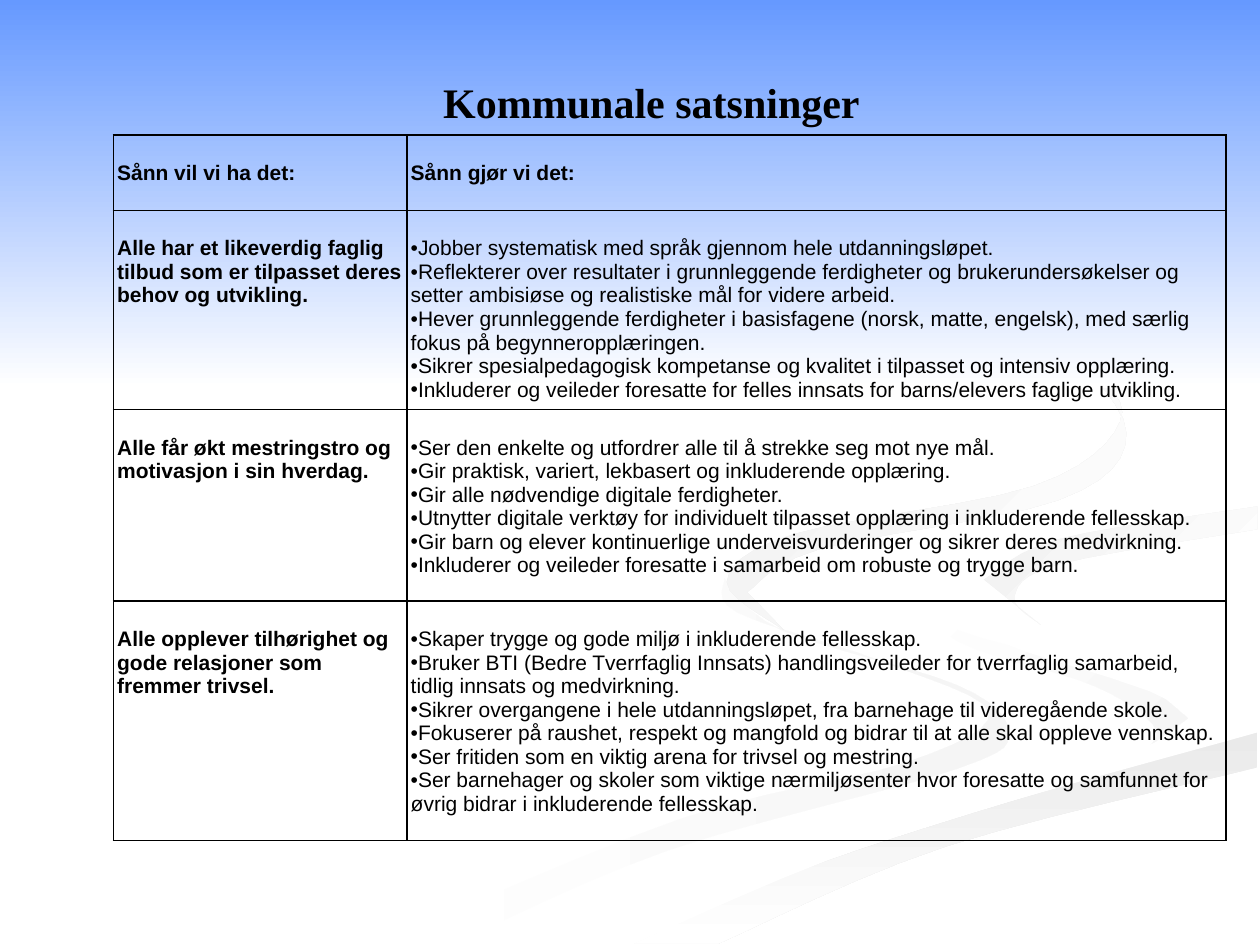
from lxml.etree import SubElement
from pptx import Presentation
from pptx.dml.color import RGBColor
from pptx.enum.shapes import MSO_SHAPE
from pptx.enum.text import MSO_ANCHOR, PP_ALIGN
from pptx.oxml.ns import qn
from pptx.util import Inches, Pt

BLACK = RGBColor(0x00, 0x00, 0x00)
WHITE = RGBColor(0xFF, 0xFF, 0xFF)
BLUE = RGBColor(0x66, 0x99, 0xFF)
PALE = RGBColor(0xF5, 0xF5, 0xF5)
GREY = RGBColor(0xEA, 0xEA, 0xEA)
MIST = RGBColor(0xF1, 0xF1, 0xF1)
SILVER = RGBColor(0xED, 0xED, 0xED)

# Content
TITLE = "Kommunale satsninger"
HEADERS = ["Sånn vil vi ha det:", "Sånn gjør vi det:"]
GOALS = [
    ("Alle har et likeverdig faglig tilbud som er tilpasset deres behov og utvikling.", [
        "Jobber systematisk med språk gjennom hele utdanningsløpet.",
        "Reflekterer over resultater i grunnleggende ferdigheter og brukerundersøkelser og "
        "setter ambisiøse og realistiske mål for videre arbeid.",
        "Hever grunnleggende ferdigheter i basisfagene (norsk, matte, engelsk), med særlig "
        "fokus på begynneropplæringen.",
        "Sikrer spesialpedagogisk kompetanse og kvalitet i tilpasset og intensiv opplæring.",
        "Inkluderer og veileder foresatte for felles innsats for barns/elevers faglige utvikling.",
    ]),
    ("Alle får økt mestringstro og motivasjon i sin hverdag.", [
        "Ser den enkelte og utfordrer alle til å strekke seg mot nye mål.",
        "Gir praktisk, variert, lekbasert og inkluderende opplæring.",
        "Gir alle nødvendige digitale ferdigheter.",
        "Utnytter digitale verktøy for individuelt tilpasset opplæring i inkluderende fellesskap.",
        "Gir barn og elever kontinuerlige underveisvurderinger og sikrer deres medvirkning.",
        "Inkluderer og veileder foresatte i samarbeid om robuste og trygge barn.",
    ]),
    ("Alle opplever tilhørighet og gode relasjoner som fremmer trivsel.", [
        "Skaper trygge og gode miljø i inkluderende fellesskap.",
        "Bruker BTI (Bedre Tverrfaglig Innsats) handlingsveileder for tverrfaglig samarbeid, "
        "tidlig innsats og medvirkning.",
        "Sikrer overgangene i hele utdanningsløpet, fra barnehage til videregående skole.",
        "Fokuserer på raushet, respekt og mangfold og bidrar til at alle skal oppleve vennskap.",
        "Ser fritiden som en viktig arena for trivsel og mestring.",
        "Ser barnehager og skoler som viktige nærmiljøsenter hvor foresatte og samfunnet for "
        "øvrig bidrar i inkluderende fellesskap.",
    ]),
]
COLS = [2.33, 6.5]
ROWS = [0.6, 1.58, 1.52, 1.9]

# Background ribbons: first colour, last colour, clockwise angle, smooth edges
RIBBONS = [
    (WHITE, PALE, 0, [
        [(5.75, 4.59), (5.85, 4.86), (7, 5.25), (7.85, 5.65), (7.2, 6.05), (5.4, 6.5), (3, 7.49)],
        [(3.6, 7.49), (5.3, 6.75), (7.6, 6.1), (8, 5.8), (7.6, 5.44), (6.2, 5), (5.75, 4.59)]]),
    (WHITE, PALE, 45, [
        [(7.24, 4.64), (7.6, 5.09), (8.7, 5.45), (9.18, 5.8), (8.94, 6.05)],
        [(9.43, 5.7), (8.9, 5.35), (7.6, 5), (7.24, 4.64)]]),
    (GREY, WHITE, 90, [
        [(5.03, 7.49), (6.3, 6.93), (8, 6.37), (9.98, 5.81)],
        [(9.98, 6.09), (7.5, 6.72), (5.7, 7.49)]]),
    (WHITE, WHITE, 0, [
        [(7.25, 4.64), (7.9, 5.08), (9.43, 5.7), (7.8, 6.34), (4.77, 7.49)],
        [(5.03, 7.49), (7, 6.67), (9.99, 5.81)],
        [(9.99, 5.38), (8.3, 4.98), (7.82, 4.6), (8.5, 4.27), (9.99, 4.02)],
        [(9.99, 3.87), (8.1, 4.17), (7.25, 4.64)]]),
    (MIST, WHITE, 45, [
        [(9.98, 4.2), (8.4, 4.48), (8.05, 4.74), (8.26, 4.96)],
        [(7.81, 4.6), (8.4, 4.28), (9.98, 4.02)]]),
    (SILVER, WHITE, 45, [
        [(7.62, 2.33), (8.6, 2.9), (8.89, 3.35), (8.2, 3.86), (6.3, 4.24), (5.77, 4.62), (6.22, 5)],
        [(5.93, 4.7), (6.5, 4.36), (8.4, 3.97), (8.94, 3.44), (8.4, 2.73), (7.62, 2.33)]]),
]


def smooth_edge(knots, steps=6):
    """Catmull-Rom curve through the knots."""
    padded = [knots[0], *knots, knots[-1]]
    points = []
    for quad in zip(padded, padded[1:], padded[2:], padded[3:]):
        for k in range(steps):
            t = k / steps
            points.append(tuple(
                b + t * (c - a) / 2 + t**2 * (2*a - 5*b + 4*c - d) / 2
                + t**3 * (3*b - a - 3*c + d) / 2
                for a, b, c, d in zip(*quad)))
    return points + [knots[-1]]


def paint(sp, first, last, angle):
    sp.shadow.inherit = False
    sp.line.fill.background()
    if first == last:
        sp.fill.solid()
        sp.fill.fore_color.rgb = first
        return
    sp.fill.gradient()
    sp.fill.gradient_angle = (360 - angle) % 360
    for stop, color, pos in zip(sp.fill.gradient_stops, (first, last), (0, 1)):
        stop.color.rgb = color
        stop.position = pos


def write(p, text, size=12, font="Arial", bold=False, align=PP_ALIGN.LEFT, bullet=False):
    p.alignment = align
    r = p.add_run()
    r.text = text
    r.font.size, r.font.name, r.font.bold = Pt(size), font, bold
    r.font.color.rgb = BLACK
    if bullet:
        pPr = p._p.get_or_add_pPr()
        pPr.set("marL", "0")
        pPr.set("indent", "0")
        SubElement(pPr, qn("a:buFont"), typeface="Arial")
        SubElement(pPr, qn("a:buChar"), char="•")


def format_cell(cell, border):
    cell.margin_left = cell.margin_right = Inches(0.03)
    cell.margin_top, cell.margin_bottom = Inches(0.21), Inches(0.02)
    tcPr = cell._tc.get_or_add_tcPr()
    for side in ("a:lnL", "a:lnR", "a:lnT", "a:lnB"):
        ln = SubElement(tcPr, qn(side), w=str(Pt(border)))
        SubElement(SubElement(ln, qn("a:solidFill")), qn("a:srgbClr"), val=str(BLACK))
    cell.fill.background()


prs = Presentation()
prs.slide_width, prs.slide_height = Inches(10), Inches(7.5)
s = prs.slides.add_slide(prs.slide_layouts[5])

# Background
for first, last, angle, edges in RIBBONS:
    start, *rest = [(Inches(x), Inches(y)) for edge in edges for x, y in smooth_edge(edge)]
    builder = s.shapes.build_freeform(*start)
    builder.add_line_segments(rest, close=True)
    paint(builder.convert_to_shape(), first, last, angle)
sky = s.shapes.add_shape(MSO_SHAPE.RECTANGLE, 0, 0, prs.slide_width, Inches(3.08))
paint(sky, BLUE, WHITE, 90)

# Title, brought in front of the background
title = s.shapes.title
title.left, title.top, title.width, title.height = map(Inches, (0.67, 0.47, 9, 0.68))
title.text_frame.vertical_anchor = MSO_ANCHOR.MIDDLE
write(title.text_frame.paragraphs[0], TITLE, size=24, font="Times New Roman", bold=True,
      align=PP_ALIGN.CENTER)
s.shapes._spTree.append(title._element)

# Table
table = s.shapes.add_table(len(ROWS), len(COLS), Inches(0.9), Inches(1.07),
                           Inches(sum(COLS)), Inches(sum(ROWS))).table
table.first_row = table.horz_banding = False
for col, width in zip(table.columns, COLS):
    col.width = Inches(width)
for row, height in zip(table.rows, ROWS):
    row.height = Inches(height)

cells = [[[h] for h in HEADERS]] + [[[goal], actions] for goal, actions in GOALS]
for i, row in enumerate(cells):
    for j, lines in enumerate(row):
        cell = table.cell(i, j)
        format_cell(cell, border=1)
        tf = cell.text_frame
        for n, line in enumerate(lines):
            p = tf.add_paragraph() if n else tf.paragraphs[0]
            write(p, line, bold=i == 0 or j == 0, bullet=i > 0 and j == 1)

prs.save("out.pptx")
